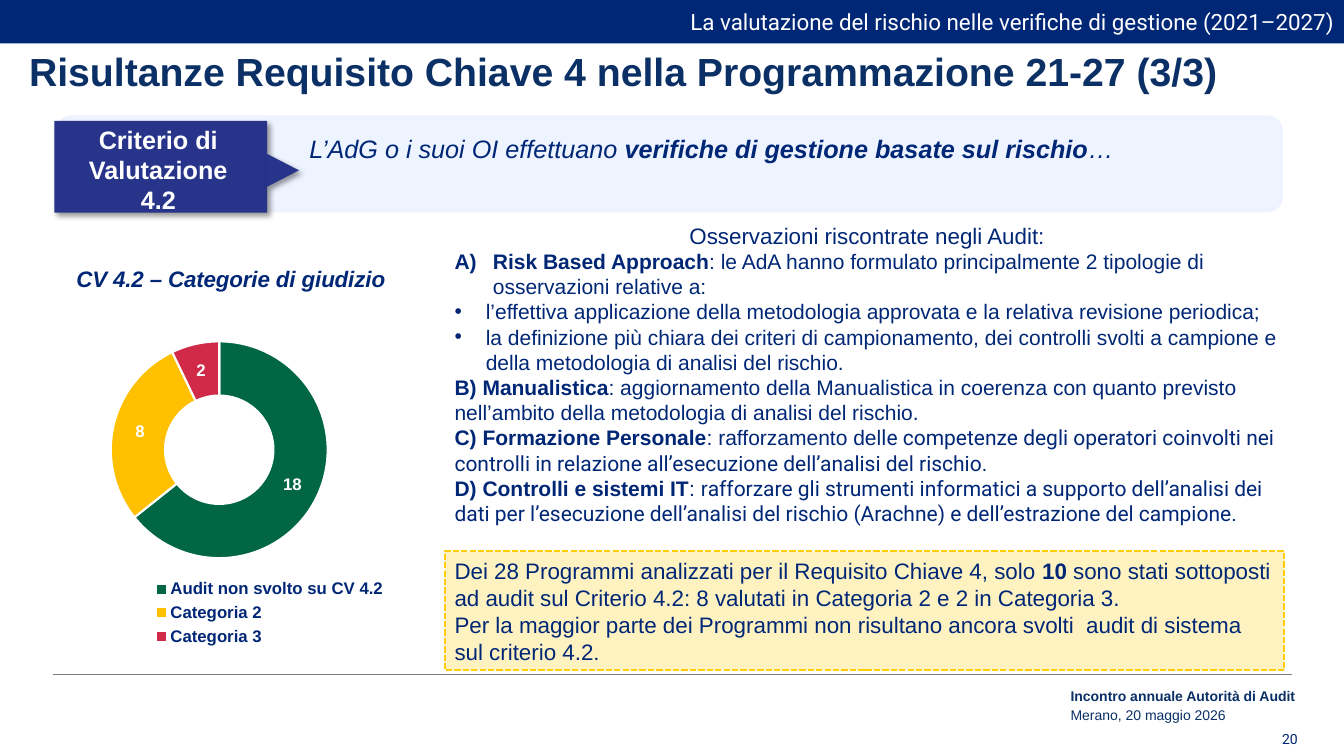
from lxml import etree
from pptx import Presentation
from pptx import util as u
from pptx.chart.data import CategoryChartData
from pptx.dml.color import RGBColor
from pptx.enum import chart as charts, dml, shapes, text
from pptx.oxml import parse_xml
from pptx.oxml.ns import nsdecls, qn

SCALE = 9144  # EMU per px, 100 px to the inch

NAVY = RGBColor(0x00, 0x27, 0x76)
INK = RGBColor(0x0B, 0x30, 0x66)
INDIGO = RGBColor(0x27, 0x34, 0x8A)
PALE_BLUE = RGBColor(0xD9, 0xE6, 0xFF)
CREAM = RGBColor(0xFF, 0xF2, 0xC1)
GOLD = RGBColor(0xFF, 0xCC, 0x05)
GREEN = RGBColor(0x00, 0x66, 0x43)
AMBER = RGBColor(0xFF, 0xC0, 0x00)
RED = RGBColor(0xD1, 0x2A, 0x48)
GREY = RGBColor(0x80, 0x80, 0x80)
WHITE = RGBColor(0xFF, 0xFF, 0xFF)

BOLD = {"bold": True}
ROBOTO = {"name": "Roboto"}
ALIGN = text.PP_ALIGN
KIND = shapes.MSO_SHAPE
SHADOW = (f'<a:effectLst {nsdecls("a")}><a:outerShdw blurRad="50800" dist="38100" dir="2700000">'
          '<a:srgbClr val="000000"><a:alpha val="40000"/></a:srgbClr></a:outerShdw></a:effectLst>')


def px(*lengths):
    return [u.Emu(length * SCALE) for length in lengths]


def set_font(font, **values):
    font.color.rgb = values.pop("color")
    values["size"] = u.Pt(values["size"])
    for name, value in values.items():
        setattr(font, name, value)


def set_layout(parent, index, **fractions):
    """Give a chart part a manual layout, as fractions of the chart, at a child index."""
    for old in parent.findall(qn("c:layout")):
        parent.remove(old)
    layout = etree.Element(qn("c:layout"))
    manual = etree.SubElement(layout, qn("c:manualLayout"))
    for name, value in fractions.items():
        etree.SubElement(manual, qn(f"c:{name}")).set("val", str(value))
    parent.insert(index, layout)


class SlideBuilder:
    def __init__(self, page, **style):
        self.page = page
        self.style = style

    def fill_text(self, box, paragraphs, anchor=text.MSO_ANCHOR.TOP, **base):
        """Fill a box; each paragraph is (spans, options), each span (words, font values)."""
        frame = box.text_frame
        frame.word_wrap = True
        frame.vertical_anchor = anchor
        for number, (spans, options) in enumerate(paragraphs):
            para = frame.add_paragraph() if number else frame.paragraphs[0]
            para.alignment = options.get("align", ALIGN.LEFT)
            if "before" in options:
                para.space_before = u.Pt(options["before"])
            if "bullet" in options:
                self.bullet(para, options["indent"], *options["bullet"])
            for words, values in spans:
                span = para.add_run()
                span.text = words
                set_font(span.font, **{**self.style, **base, **options.get("font", {}), **values})

    def bullet(self, para, indent, tag, name, value):
        props = para._p.get_or_add_pPr()
        width = px(indent)[0]
        props.set("marL", str(width))
        props.set("indent", str(-width))
        etree.SubElement(props, qn("a:buFont")).set("typeface", "Arial")
        etree.SubElement(props, qn(tag)).set(name, value)

    def text(self, at, paragraphs, **options):
        box = self.page.shapes.add_textbox(*px(*at))
        self.fill_text(box, paragraphs, **options)

    def shape(self, kind, at, fill, line=None, width=0, shadow=False):
        box = self.page.shapes.add_shape(kind, *px(*at))
        box.fill.solid()
        box.fill.fore_color.rgb = fill
        if line is None:
            box.line.fill.background()
        else:
            box.line.color.rgb = line
            box.line.width = u.Pt(width)
        if shadow:
            box._element.spPr.append(parse_xml(SHADOW))
        else:
            box.shadow.inherit = False
        return box

    def rule(self, start, end, color, width):
        line = self.page.shapes.add_connector(shapes.MSO_CONNECTOR.STRAIGHT, *px(*start, *end))
        line.line.color.rgb = color
        line.line.width = u.Pt(width)
        etree.SubElement(line._element.spPr, qn("a:effectLst"))

    def doughnut(self, at, title, slices):
        """Draw a doughnut from (category, value, colour) slices."""
        data = CategoryChartData()
        data.categories = [category for category, _, _ in slices]
        data.add_series("Series 1", [value for _, value, _ in slices])
        frame = self.page.shapes.add_chart(charts.XL_CHART_TYPE.DOUGHNUT, *px(*at), data)
        chart = frame.chart
        set_font(chart.font, **{**self.style, **ROBOTO, "size": 10})

        chart.has_title = True
        para = chart.chart_title.text_frame.paragraphs[0]
        span = para.add_run()
        span.text = title
        set_font(span.font, **self.style, bold=True, italic=True)

        chart.has_legend = True
        chart.legend.position = charts.XL_LEGEND_POSITION.BOTTOM
        chart.legend.include_in_layout = False
        set_font(chart.legend.font, **{**self.style, "size": 12}, bold=True)

        plot = chart.plots[0]
        plot.vary_by_categories = True
        series = plot.series[0]
        for number, (_, _, color) in enumerate(slices):
            look = series.points[number].format
            look.fill.solid()
            look.fill.fore_color.rgb = color
            look.line.color.rgb = WHITE
            look.line.width = u.Pt(1.5)
        labels = series.data_labels
        labels.show_value = True
        set_font(labels.font, **{**self.style, "size": 12, "color": WHITE}, bold=True)

        root = chart.element
        root.find(".//" + qn("c:holeSize")).set("val", "75")
        edge = {"xMode": "edge", "yMode": "edge"}
        set_layout(root.find(".//" + qn("c:title")), 1, **edge, x=0.15, y=0.07)
        set_layout(root.find(".//" + qn("c:legend")), 1, **edge, x=0.3, y=0.8, w=0.52, h=0.18)
        set_layout(root.find(".//" + qn("c:plotArea")), 0, layoutTarget="inner", **edge,
                   x=0.23, y=0.19, w=0.45, h=0.64)


def main():
    deck = Presentation()
    deck.slide_width, deck.slide_height = px(1333, 750)
    page = deck.slides.add_slide(deck.slide_layouts[6])
    build = SlideBuilder(page, name="Arial", size=16, color=NAVY)
    middle = text.MSO_ANCHOR.MIDDLE

    build.rule((53, 669), (1281, 669), GREY, 0.75)
    build.text((883, 723, 414, 20), [([("20", ROBOTO)], {"align": ALIGN.RIGHT})],
               anchor=middle, size=10)
    build.text((19, 42, 1220, 58),
               [([("Risultanze Requisito Chiave 4 nella Programmazione 21-27 (3/3)", BOLD)], {})],
               size=28, color=INK)
    build.text((1052, 677, 270, 43), [
        ([("Incontro annuale Autorità di Audit", BOLD)], {}),
        ([("Merano, 20 maggio 2026", {})], {"before": 2}),
    ], size=10, color=INK)

    header = build.shape(KIND.RECTANGLE, (0, 0, 1333, 43), NAVY)
    build.fill_text(header, [([("La valutazione del rischio nelle verifiche di gestione (2021–2027)",
                                ROBOTO)], {"align": ALIGN.RIGHT})], anchor=middle, color=WHITE)

    panel = build.shape(KIND.FLOWCHART_ALTERNATE_PROCESS, (54, 113, 1220, 99), PALE_BLUE, WHITE, 2)
    tint = panel._element.spPr.find(qn("a:solidFill"))[0]
    etree.SubElement(tint, qn("a:alpha")).set("val", "43000")
    build.shape(KIND.RECTANGLE, (54, 120, 211, 91), INDIGO, shadow=True)
    build.text((59, 118, 196, 101),
               [([("Criterio di Valutazione 4.2", BOLD)], {"align": ALIGN.CENTER})],
               size=18, color=WHITE)
    pointer = build.shape(KIND.ISOSCELES_TRIANGLE, (264, 153, 33, 32), INDIGO, shadow=True)
    pointer.rotation = 90
    build.text((297, 127, 971, 40), [([
        ("L’AdG o i suoi OI effettuano ", {}),
        ("verifiche di gestione basate sul rischio", BOLD),
        ("…", {}),
    ], {"align": ALIGN.JUSTIFY})], size=18, italic=True)

    build.doughnut((0, 229, 478, 426), "CV 4.2 – Categorie di giudizio", [
        ("Audit non svolto su CV 4.2", 18, GREEN),
        ("Categoria 2", 8, AMBER),
        ("Categoria 3", 2, RED),
    ])

    summary = build.shape(KIND.RECTANGLE, (441, 547, 833, 118), CREAM, GOLD, 1.5)
    summary.line.dash_style = dml.MSO_LINE.SQUARE_DOT
    build.fill_text(summary, [
        ([("Dei 28 Programmi analizzati per il Requisito Chiave 4, solo ", {}),
          ("10 ", BOLD),
          ("sono stati sottoposti ad audit sul Criterio 4.2: 8 valutati in Categoria 2 "
           "e 2 in Categoria 3.", {})], {}),
        ([("Per la maggior parte dei Programmi non risultano ancora svolti  audit di sistema "
           "sul criterio 4.2", {}), (".", ROBOTO)], {}),
    ], anchor=middle)

    letter = {"indent": 38, "bullet": ("a:buAutoNum", "type", "alphaUcParenR")}
    dot = {"indent": 31, "bullet": ("a:buChar", "char", "•")}
    build.text((441, 215, 838, 315), [
        ([("Osservazioni riscontrate negli Audit:", {})],
         {"align": ALIGN.CENTER, "font": {"size": 16}}),
        ([("Risk Based Approach", BOLD),
          (": le AdA hanno formulato principalmente 2 tipologie di osservazioni relative a:", {})],
         letter),
        ([("l’effettiva applicazione della metodologia approvata e la relativa revisione "
           "periodica;", {})], dot),
        ([("la definizione più chiara dei criteri di campionamento, dei controlli svolti a "
           "campione e della metodologia di analisi del rischio.", {})], dot),
        ([("B) Manualistica", BOLD),
          (": aggiornamento della Manualistica in coerenza con quanto previsto nell’ambito "
           "della metodologia di analisi del rischio.", {})], {}),
        ([("C) Formazione Personale", BOLD), (": rafforzamento del", {}),
          ("le competenze degli operatori coinvolti nei controlli in relazione all’esecuzione "
           "dell’analisi del rischio.", ROBOTO)], {}),
        ([("D) Controlli e sistemi IT", BOLD), (": r", {}),
          ("afforzare gli strumenti informatici a supporto dell’analisi dei dati per "
           "l’esecuzione dell’analisi del rischio (Arachne) e dell’estrazione del campione.",
           ROBOTO)], {}),
    ], size=15)

    deck.save("out.pptx")


if __name__ == "__main__":
    main()
